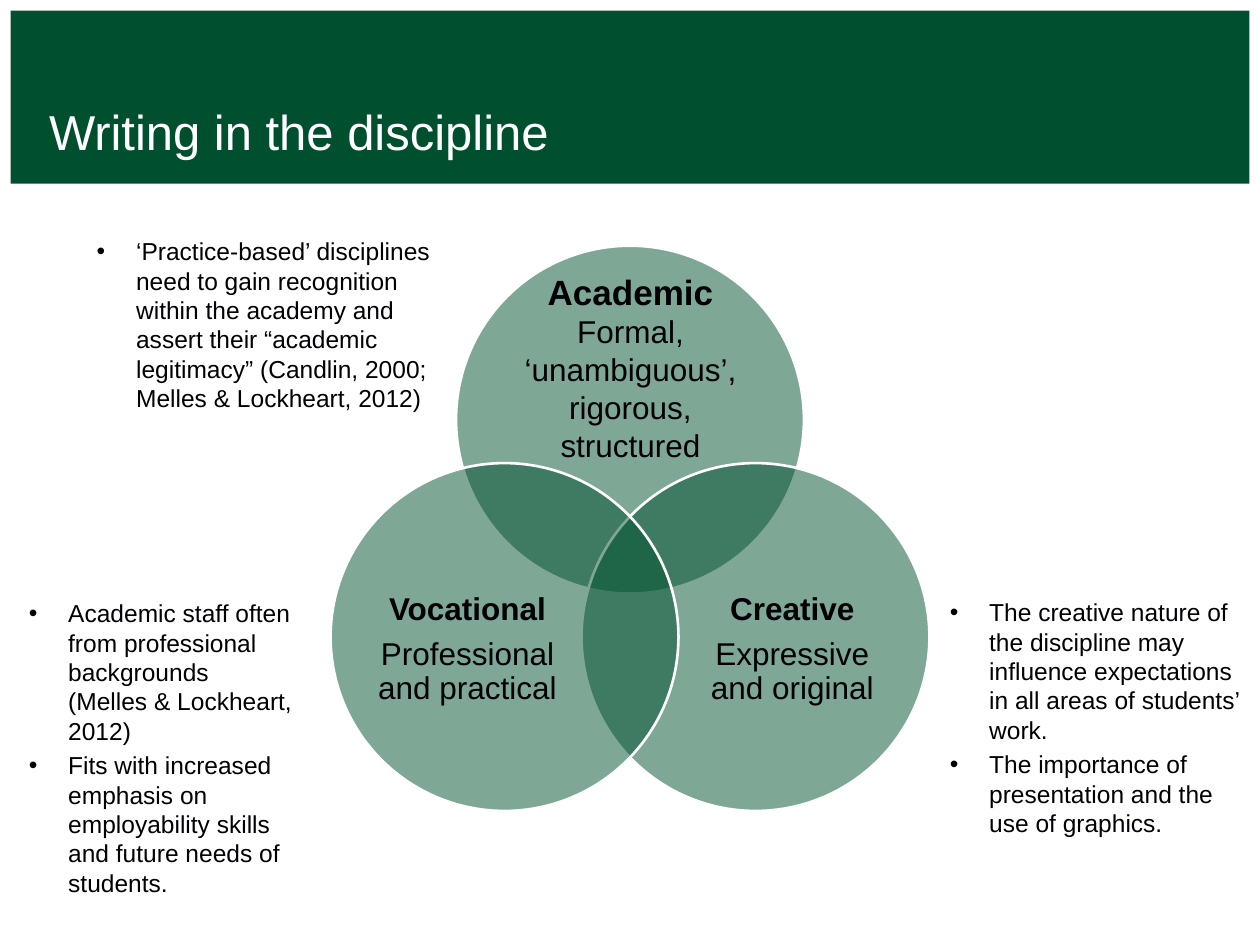
from math import cos, radians, sin

from lxml import etree
from pptx import Presentation
from pptx.dml.color import RGBColor
from pptx.enum.shapes import MSO_SHAPE
from pptx.enum.text import MSO_ANCHOR, PP_ALIGN
from pptx.oxml.ns import qn
from pptx.util import Pt

RECT, OVAL = MSO_SHAPE.RECTANGLE, MSO_SHAPE.OVAL
TOP, MIDDLE, BOTTOM = MSO_ANCHOR.TOP, MSO_ANCHOR.MIDDLE, MSO_ANCHOR.BOTTOM
CENTER = PP_ALIGN.CENTER

GREEN, WHITE, INK = "00502F", "FFFFFF", "000005"
TITLE = "Writing in the discipline"
CIRCLES = [
    dict(angle=-90, head="Academic", size=20, body="Formal, ‘unambiguous’, rigorous, structured",
         box=(287.2, 154.5, 146.2, 112), anchor=TOP, format={}),
    dict(angle=30, head="Creative", size=18, body="Expressive and original",
         box=(393, 316.8, 119.5, 109.4), anchor=MIDDLE,
         format=dict(line_spacing=0.9, space_after=Pt(6.3))),
    dict(angle=150, head="Vocational", size=18, body="Professional and practical",
         box=(207.4, 316.8, 119.5, 109.4), anchor=MIDDLE,
         format=dict(line_spacing=0.9, space_after=Pt(6.3))),
]
NOTES = [
    ((48.2, 131.4, 209.5, 138.2), [
        "‘Practice-based’ disciplines need to gain recognition within the academy and assert "
        "their “academic legitimacy” (Candlin, 2000; Melles & Lockheart, 2012)"]),
    ((9.4, 338.3, 165.6, 180), [
        "Academic staff often from professional backgrounds (Melles & Lockheart, 2012)",
        "Fits with increased emphasis on employability skills and future needs of students."]),
    ((535.7, 337.7, 184.3, 146.2), [
        "The creative nature of the discipline may influence expectations in all areas of "
        "students’ work.",
        "The importance of presentation and the use of graphics."]),
]
CENTRE_X, CENTRE_Y, SPREAD, DIAMETER = 360, 322.6, 82.8, 198.8
INDENT = 22.5


def rgb(value):
    return RGBColor.from_string(value)


def add_shape(s, kind, box, fill):
    sp = s.shapes.add_shape(kind, *map(Pt, box))
    sp.shadow.inherit = False
    sp.fill.solid()
    sp.fill.fore_color.rgb = rgb(fill)
    sp.line.fill.background()
    return sp


def add_text(s, box, anchor=TOP, inset=None):
    tf = s.shapes.add_textbox(*map(Pt, box)).text_frame
    tf.word_wrap = True
    tf.vertical_anchor = anchor
    if inset is not None:
        for side in ("left", "top", "right", "bottom"):
            setattr(tf, f"margin_{side}", Pt(inset))
    return tf


def add_paragraph(tf, i, text, size, color=INK, bold=False, **formats):
    p = tf.paragraphs[0] if i == 0 else tf.add_paragraph()
    for name, value in formats.items():
        setattr(p, name, value)
    r = p.add_run()
    r.text = text
    for name, value in dict(name="Arial", size=Pt(size), bold=bold).items():
        setattr(r.font, name, value)
    r.font.color.rgb = rgb(color)
    return p


def add_bullet(p):
    pPr = p._p.get_or_add_pPr()
    pPr.set("marL", str(Pt(INDENT)))
    pPr.set("indent", str(-Pt(INDENT)))
    etree.SubElement(pPr, qn("a:buFont")).set("typeface", "Arial")
    etree.SubElement(pPr, qn("a:buChar")).set("char", "•")


def add_circle(s, circle):
    angle = radians(circle["angle"])
    left = CENTRE_X + SPREAD * cos(angle) - DIAMETER / 2
    top = CENTRE_Y + SPREAD * sin(angle) - DIAMETER / 2
    sp = add_shape(s, OVAL, (left, top, DIAMETER, DIAMETER), GREEN)
    color = sp._element.spPr.find(qn("a:solidFill"))[0]
    etree.SubElement(color, qn("a:alpha")).set("val", "50000")
    sp.line.color.rgb = rgb(WHITE)
    sp.line.width = Pt(1.5)
    tf = add_text(s, circle["box"], circle["anchor"], 0)
    formats = dict(alignment=CENTER, **circle["format"])
    add_paragraph(tf, 0, circle["head"], circle["size"], bold=True, **formats)
    add_paragraph(tf, 1, circle["body"], 18, **formats)


def main():
    prs = Presentation()
    prs.slide_width, prs.slide_height = Pt(720), Pt(540)
    s = prs.slides.add_slide(prs.slide_layouts[6])
    add_shape(s, RECT, (6, 6, 708, 99), GREEN)
    add_paragraph(add_text(s, (28, 33, 384, 58.5), BOTTOM, 0), 0, TITLE, 28, WHITE)
    for circle in CIRCLES:
        add_circle(s, circle)
    for box, items in NOTES:
        tf = add_text(s, box)
        for i, item in enumerate(items):
            add_bullet(add_paragraph(tf, i, item, 14, space_before=Pt(2.8 if i else 0)))
    prs.save("out.pptx")


if __name__ == "__main__":
    main()
